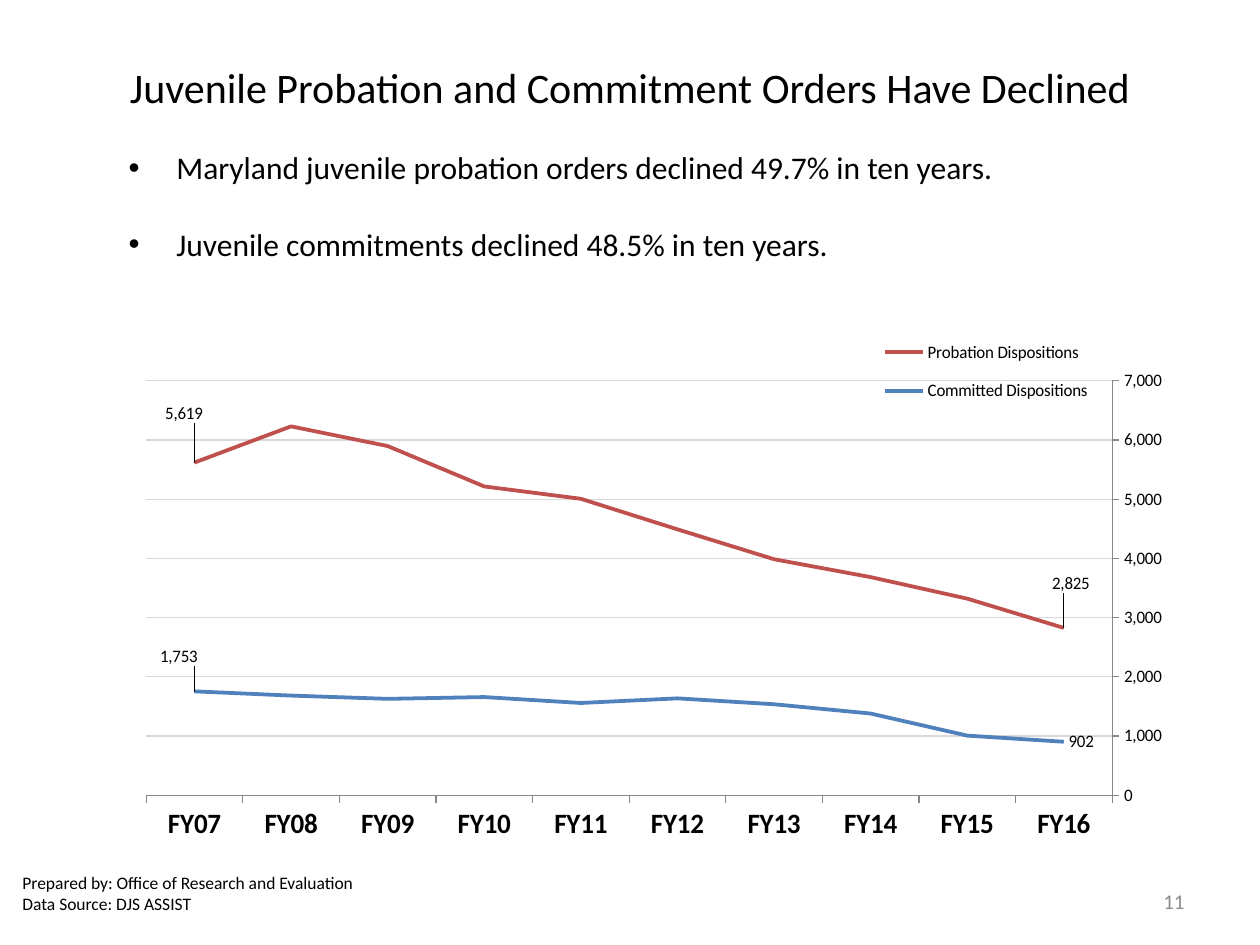
"""Build the slide on the decline of juvenile probation and commitment orders."""
from dataclasses import dataclass

from lxml import etree
from pptx import Presentation
from pptx import util as u
from pptx.chart import data as cd
from pptx.dml import color as col
from pptx.enum import chart as ch
from pptx.enum import text as t
from pptx.oxml import ns, parse_xml


@dataclass(frozen=True)
class Theme:
    font: str = "Calibri"
    ink: str = "000000"
    muted: str = "8C8C8C"
    axis: str = "868686"
    grid: str = "D9D9D9"
    red: str = "C0504D"
    blue: str = "4F81BD"
    title: int = 24
    body: int = 18
    cats: int = 16
    page: int = 12
    small: int = 10


THEME = Theme()
YEARS = [f"FY{year:02d}" for year in range(16, 6, -1)]
SERIES = [
    ("Probation Dispositions", THEME.red,
     [2825, 3319, 3683, 3986, 4490, 5006, 5215, 5897, 6230, 5619],
     {0: (-0.016, -0.078), 9: (-0.033, -0.086)}),
    ("Committed Dispositions", THEME.blue,
     [902, 1006, 1379, 1535, 1635, 1557, 1657, 1627, 1682, 1753],
     {0: None, 9: (-0.038, -0.062)}),
]


def rgb(code):
    return col.RGBColor.from_string(code)


def style(font, size, color=THEME.ink, bold=False):
    font.name, font.size, font.bold = THEME.font, u.Pt(size), bold
    font.color.rgb = rgb(color)


def place(shape, left, top, width, height):
    shape.left, shape.top = u.Inches(left), u.Inches(top)
    shape.width, shape.height = u.Inches(width), u.Inches(height)


def write(shape, lines, size, color=THEME.ink, align=t.PP_ALIGN.LEFT, gap=0):
    frame = shape.text_frame
    frame.word_wrap = True
    frame.auto_size = t.MSO_AUTO_SIZE.NONE
    frame.vertical_anchor = t.MSO_ANCHOR.MIDDLE
    for i, line in enumerate(lines):
        para = frame.add_paragraph() if i else frame.paragraphs[0]
        para.alignment = align
        para.space_before = u.Pt(gap if i else 0)
        run = para.add_run()
        run.text = line
        style(run.font, size, color)


def indent(shape, depth):
    for para in shape.text_frame.paragraphs:
        props = para._p.get_or_add_pPr()
        props.set("marL", str(u.Inches(depth)))
        props.set("indent", str(-u.Inches(depth)))
        mark = etree.SubElement(props, ns.qn("a:buChar"))
        mark.set("char", "•")


def add_note(slide, box, lines, size, **look):
    note = slide.shapes.add_textbox(0, 0, 0, 0)
    place(note, *box)
    write(note, lines, size, **look)


def layout(target=None, **parts):
    items = f'<c:layoutTarget val="{target}"/>' if target else ""
    if target or "w" in parts:
        items += '<c:xMode val="edge"/><c:yMode val="edge"/>'
    items += "".join(f'<c:{key} val="{val}"/>' for key, val in parts.items())
    return parse_xml(f'<c:layout {ns.nsdecls("c")}><c:manualLayout>{items}'
                     '</c:manualLayout></c:layout>')


def set_layout(parent, new, after=None):
    for old in parent.findall(ns.qn("c:layout")):
        parent.remove(old)
    if after is None:
        parent.insert(0, new)
    else:
        parent.find(ns.qn(after)).addnext(new)


def add_labels(series, shifts):
    labels = series.data_labels
    labels.show_value = False
    for i, shift in shifts.items():
        label = series.points[i].data_label
        label.position = ch.XL_LABEL_POSITION.RIGHT
        if shift:
            node = labels._element.xpath(f'c:dLbl[c:idx/@val="{i}"]')[0]
            set_layout(node, layout(x=shift[0], y=shift[1]), "c:idx")


def set_axes(chart):
    cats, vals = chart.category_axis, chart.value_axis
    cats.reverse_order = True
    cats.crosses = ch.XL_AXIS_CROSSES.MAXIMUM
    style(cats.tick_labels.font, THEME.cats, bold=True)
    vals.minimum_scale, vals.maximum_scale = 0, 7000
    vals.major_unit = 1000
    vals.tick_labels.number_format = r"#,##0_);\(#,##0\)"
    vals.tick_labels.number_format_is_linked = False
    grid = vals.major_gridlines.format.line
    grid.color.rgb, grid.width = rgb(THEME.grid), u.Pt(0.75)
    for axis in (cats, vals):
        axis.major_tick_mark = ch.XL_TICK_MARK.OUTSIDE
        axis.format.line.color.rgb = rgb(THEME.axis)
        axis.format.line.width = u.Pt(0.75)


def add_trend(slide, box):
    data = cd.CategoryChartData(number_format="#,##0")
    data.categories = YEARS
    for name, _, vals, _ in SERIES:
        data.add_series(name, vals)
    chart = slide.shapes.add_chart(
        ch.XL_CHART_TYPE.LINE, *map(u.Inches, box), data).chart
    chart.has_title = False
    style(chart.font, THEME.small)
    chart.plots[0].vary_by_categories = False
    set_axes(chart)
    for series, (_, color, _, shifts) in zip(chart.plots[0].series, SERIES):
        series.smooth = False
        series.format.line.color.rgb = rgb(color)
        series.format.line.width = u.Pt(2.25)
        add_labels(series, shifts)
    chart.has_legend = True
    chart.legend.position = ch.XL_LEGEND_POSITION.RIGHT
    chart.legend.include_in_layout = True
    set_layout(chart.legend._element,
               layout(x=0.757, y=0.053, w=0.21, h=0.17), "c:legendPos")
    area = chart._chartSpace.find(".//" + ns.qn("c:plotArea"))
    set_layout(area, layout("inner", x=0.05, y=0.154, w=0.934, h=0.731))


def main():
    deck = Presentation()
    deck.slide_width, deck.slide_height = u.Inches(10), u.Inches(7.5)
    slide = deck.slides.add_slide(deck.slide_layouts[1])
    title, body = slide.placeholders
    place(title, 0, 0.3, 10, 0.78)
    write(title, ["Juvenile Probation and Commitment Orders Have Declined"],
          THEME.title, align=t.PP_ALIGN.CENTER)
    place(body, 0.92, 1.17, 8.68, 0.92)
    write(body, ["Maryland juvenile probation orders declined 49.7% in ten years.",
                 "Juvenile commitments declined 48.5% in ten years."],
          THEME.body, gap=22)
    indent(body, 0.38)
    add_note(slide, (7.17, 6.95, 2.33, 0.4), ["11"], THEME.page,
             color=THEME.muted, align=t.PP_ALIGN.RIGHT)
    add_note(slide, (0.08, 6.83, 2.92, 0.52),
             ["Prepared by: Office of Research and Evaluation",
              "Data Source: DJS ASSIST"], THEME.small)
    add_trend(slide, (0.75, 2.33, 8.5, 4.5))
    deck.save("out.pptx")


if __name__ == "__main__":
    main()
